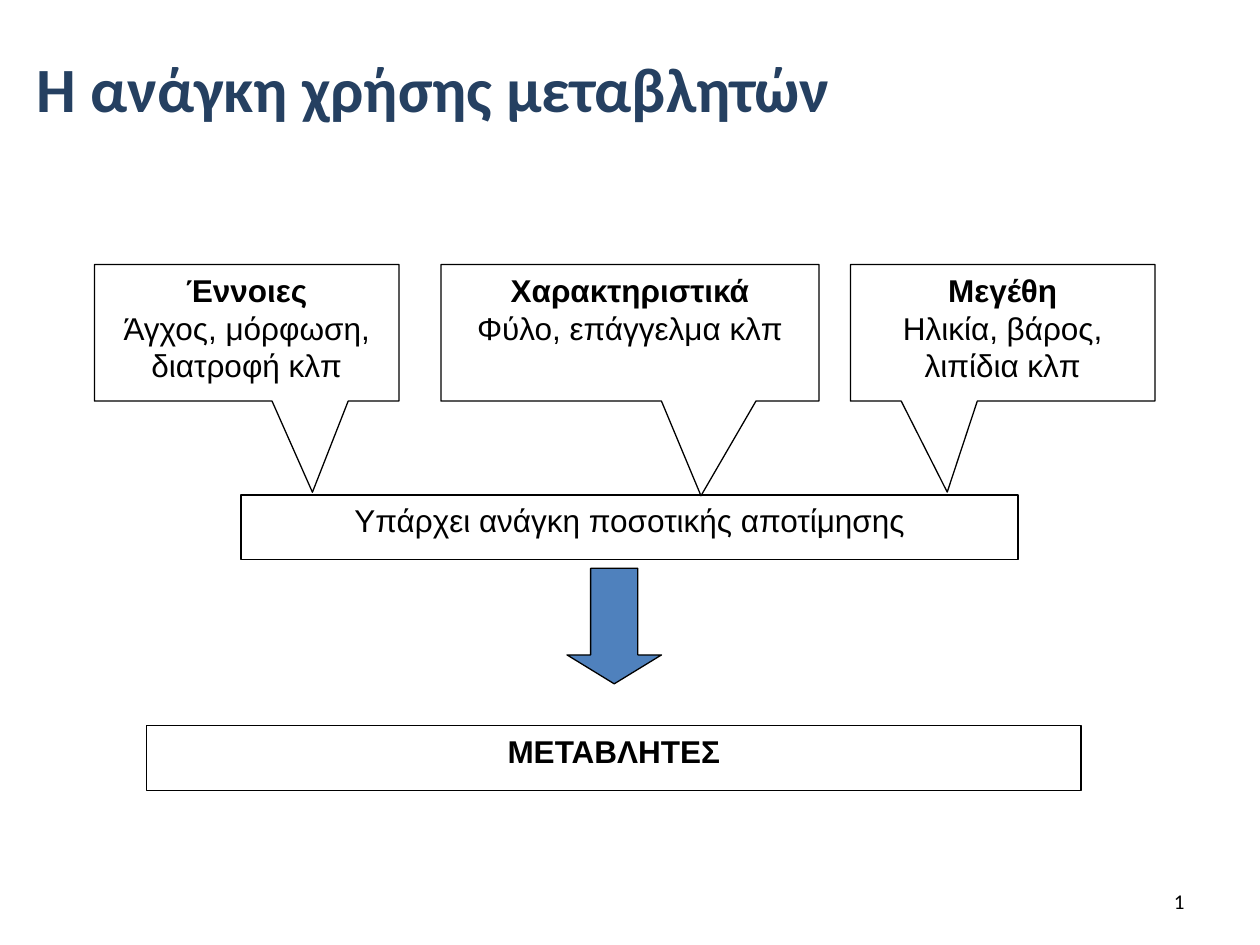
from pptx import Presentation
from pptx.dml.color import RGBColor
from pptx.enum.shapes import MSO_SHAPE
from pptx.enum.text import MSO_ANCHOR, PP_ALIGN
from pptx.util import Pt

CALLOUT = MSO_SHAPE.RECTANGULAR_CALLOUT
RECTANGLE = MSO_SHAPE.RECTANGLE
DOWN_ARROW = MSO_SHAPE.DOWN_ARROW
TOP, MIDDLE = MSO_ANCHOR.TOP, MSO_ANCHOR.MIDDLE
LEFT, CENTER, RIGHT = PP_ALIGN.LEFT, PP_ALIGN.CENTER, PP_ALIGN.RIGHT

COLORS = {"text": "000000", "line": "000000", "title": "254061", "arrow": "4F81BD"}
CALLOUT_TOP, CALLOUT_HEIGHT = 151.2, 78
BOX_HEIGHT = 36.9

# left, width, pointer tip (x, y), heading, examples
CALLOUTS = [
    (54, 174, (0.216, 1.168), "Έννοιες", "Άγχος, μόρφωση, διατροφή κλπ"),
    (252, 216, (0.188, 1.194), "Χαρακτηριστικά", "Φύλο, επάγγελμα κλπ"),
    (486, 174, (-0.182, 1.167), "Μεγέθη", "Ηλικία, βάρος, λιπίδια κλπ"),
]


class SlideBuilder:
    """Holds the current slide and the style shared by its elements."""

    body_font = "Arial"
    title_font = "Calibri"
    body_size = 18
    line_width = 0.75

    def __init__(self, slide):
        self.slide = slide

    def color(self, name):
        return RGBColor.from_string(COLORS[name])

    def set_text(self, shape, lines, font, size, color, align, anchor):
        """Fill the shape with one paragraph per (text, bold) pair."""
        frame = shape.text_frame
        frame.word_wrap = True
        frame.vertical_anchor = anchor
        frame.text = "\n".join(text for text, _ in lines)
        for paragraph, (_, bold) in zip(frame.paragraphs, lines):
            paragraph.alignment = align
            paragraph.font.name = font
            paragraph.font.size = Pt(size)
            paragraph.font.bold = bold
            paragraph.font.color.rgb = self.color(color)

    def outlined(self, kind, left, top, width, height, fill=None, adjustments=()):
        shape = self.slide.shapes.add_shape(
            kind, Pt(left), Pt(top), Pt(width), Pt(height))
        shape.shadow.inherit = False
        if fill:
            shape.fill.solid()
            shape.fill.fore_color.rgb = self.color(fill)
        else:
            shape.fill.background()
        shape.line.color.rgb = self.color("line")
        shape.line.width = Pt(self.line_width)
        for index, value in enumerate(adjustments):
            shape.adjustments[index] = value
        return shape

    def box(self, kind, left, top, width, height, lines, adjustments=()):
        shape = self.outlined(kind, left, top, width, height, adjustments=adjustments)
        self.set_text(shape, lines, self.body_font, self.body_size, "text", CENTER, TOP)

    def label(self, left, top, width, height, text, size, color, align,
              bold=False, inset=7.2):
        shape = self.slide.shapes.add_textbox(
            Pt(left), Pt(top), Pt(width), Pt(height))
        shape.text_frame.margin_left = Pt(inset)
        self.set_text(shape, [(text, bold)], self.title_font, size, color, align, MIDDLE)


def main():
    presentation = Presentation()
    presentation.slide_width, presentation.slide_height = Pt(720), Pt(540)
    builder = SlideBuilder(presentation.slides.add_slide(presentation.slide_layouts[6]))

    builder.label(0, 0, 720, 100, "Η ανάγκη χρήσης μεταβλητών", 36, "title", LEFT,
                  bold=True, inset=20.9)
    for left, width, tip, heading, examples in CALLOUTS:
        builder.box(CALLOUT, left, CALLOUT_TOP, width, CALLOUT_HEIGHT,
                    [(heading, True), (examples, False)], tip)
    builder.box(RECTANGLE, 137.8, 282.8, 444, BOX_HEIGHT,
                [("Υπάρχει ανάγκη ποσοτικής αποτίμησης", False)])
    builder.outlined(DOWN_ARROW, 324, 324.8, 54, 66, "arrow", (0.5, 0.306))
    builder.box(RECTANGLE, 83.8, 414.8, 534, BOX_HEIGHT, [("ΜΕΤΑΒΛΗΤΕΣ", True)])
    builder.label(516, 500.5, 168, 28.8, "1", 12, "text", RIGHT)

    presentation.save("out.pptx")


if __name__ == "__main__":
    main()
